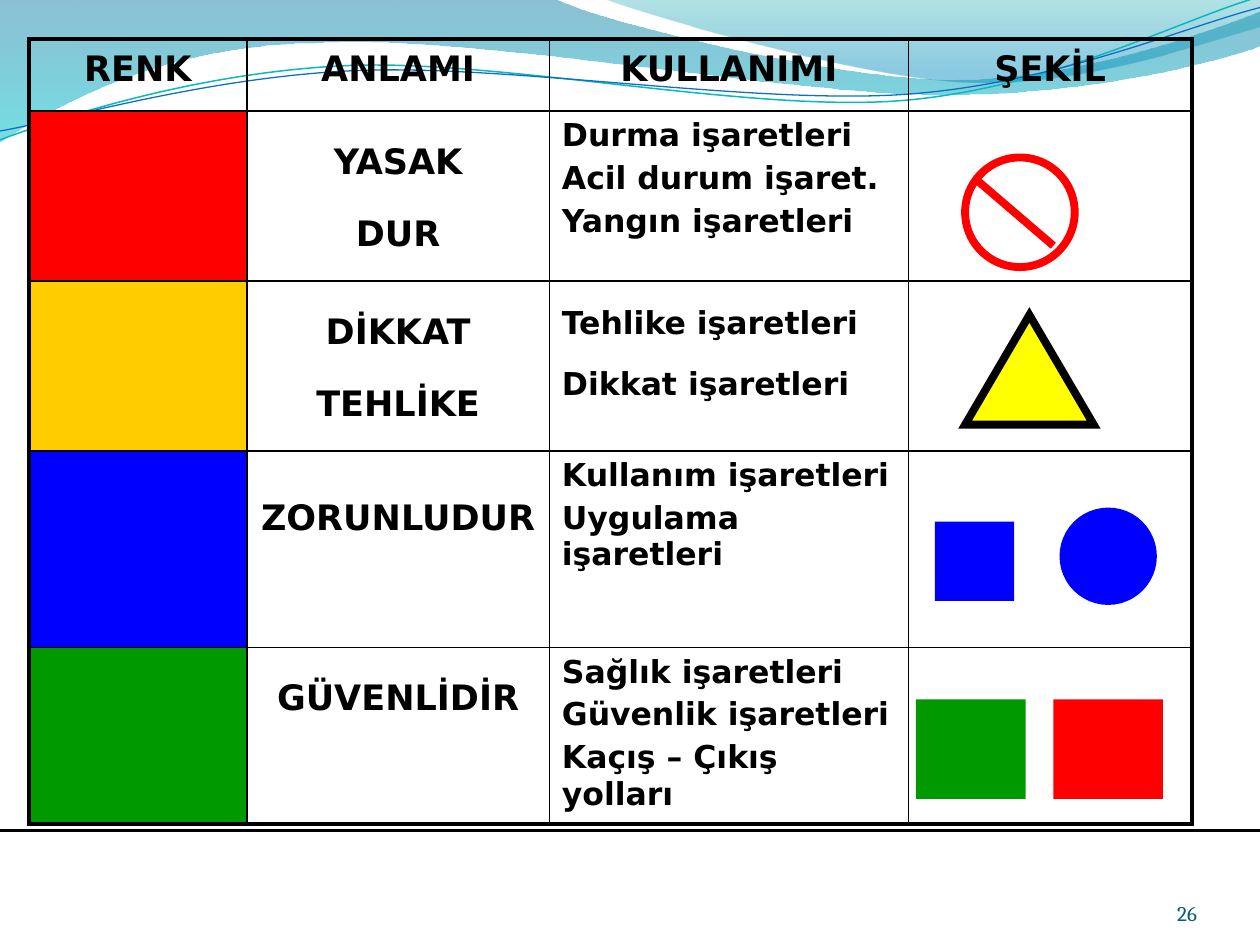
from dataclasses import dataclass
from math import cos, radians, sin
from lxml.etree import SubElement
from pptx import Presentation
from pptx.dml.color import RGBColor
from pptx.enum.shapes import MSO_CONNECTOR, MSO_SHAPE as Kind
from pptx.enum.text import MSO_ANCHOR as Anchor, PP_ALIGN as Align
from pptx.oxml.ns import qn
from pptx.util import Inches, Pt


@dataclass(frozen=True)
class Theme:
    font: str = "DejaVu Sans"
    serif: str = "Cambria"
    head: int = 20
    body: int = 18
    note: int = 12
    thin: float = 1
    edge: float = 2.25
    bold: float = 4.5
    black: str = "000000"
    white: str = "FFFFFF"
    red: str = "FF0000"
    amber: str = "FFCC00"
    yellow: str = "FFFF00"
    blue: str = "0000FF"
    green: str = "009900"
    teal: str = "045D75"


T = Theme()
COLS = (1.73, 2.4, 2.85, 2.25)
ROWS = (0.57, 1.35, 1.35, 1.56, 1.26)
HEADS = ("RENK", "ANLAMI", "KULLANIMI", "ŞEKİL")
# colour, meanings, their line spacing, uses, their line spacing
SIGNS = (
    (T.red, ("YASAK", "DUR"), 1.6,
     ("Durma işaretleri", "Acil durum işaret.", "Yangın işaretleri"), 1),
    (T.amber, ("DİKKAT", "TEHLİKE"), 1.6,
     ("Tehlike işaretleri", "Dikkat işaretleri"), 1.5),
    (T.blue, ("ZORUNLUDUR",), 2,
     ("Kullanım işaretleri", "Uygulama işaretleri"), 1),
    (T.green, ("GÜVENLİDİR",), 1.6,
     ("Sağlık işaretleri", "Güvenlik işaretleri", "Kaçış – Çıkış yolları"), 1),
)
# Waves: a start, then steps of one point (line) or three (curve);
# bands add gradient stops of (position, colour, opacity)
BANDS = (
    ((0, -0.01), (
        ((4.4, -0.01),),
        ((4.76, 0.17), (6.64, 0.63), (7.58, 0.63)),
        ((8.53, 0.63), (9.58, 0.26), (10, 0.09)),
        ((10.01, 0.36),),
        ((9.83, 0.44), (8.7, 0.76), (7.46, 0.75)),
        ((6.22, 0.75), (3.82, 0.28), (2.57, 0.34)),
        ((1.29, 0.35), (0.46, 0.83), (-0.01, 1.13))),
     ((0, "0074A1", 45), (1, "00C6CF", 55))),
    ((4.79, -0.01), (
        ((5.09, 0.11), (6.82, 0.62), (7.69, 0.65)),
        ((8.56, 0.69), (9.61, 0.32), (10, 0.21)),
        ((10, 0),)),
     ((0, "00A1A9", 30), (0.8, "008BBF", 45))),
)
STRANDS = (
    ((0, 1.11), (
        ((0.48, 0.93), (1.58, 0.57), (2.77, 0.52)),
        ((3.95, 0.47), (5.93, 0.89), (7.13, 0.8)),
        ((8.33, 0.71), (9.38, 0.15), (9.98, -0.02))), "0AB8BF", 0.85),
    ((0, 1.04), (
        ((0.47, 0.96), (1.64, 0.61), (2.83, 0.56)),
        ((4.03, 0.51), (5.97, 0.83), (7.17, 0.75)),
        ((8.36, 0.67), (9.41, 0.21), (10, 0.06))), "0F6FC6", 0.75),
)
TILT = 357.3
PIVOT = (4.99, 0.58)


def rgb(hue):
    return RGBColor.from_string(hue)


def turn(point, angle):
    """Turn a point clockwise about the pivot of the strands."""
    dx, dy = point[0] - PIVOT[0], point[1] - PIVOT[1]
    c, s = cos(radians(angle)), sin(radians(angle))
    return PIVOT[0] + dx * c - dy * s, PIVOT[1] + dx * s + dy * c


def wave(slide, box, start, steps, close, tilt=0):
    """Draw a freeform whose three-point steps are cubic curves."""
    left, top = box
    pts = [turn(p, -tilt) for p in (start, *(p for step in steps for p in step))]
    pts = [(Inches(left + x), Inches(top + y)) for x, y in pts]
    form = slide.shapes.build_freeform(*pts[0])
    form.add_line_segments(pts[1:], close=close)
    shape = form.convert_to_shape()
    shape.shadow.inherit = False
    shape.rotation = tilt
    nodes = iter(list(shape._element.iter(qn("a:lnTo"))))
    for step in steps:
        group = [next(nodes) for _ in step]
        if len(group) == 3:
            group[0].tag = qn("a:cubicBezTo")
            for node in group[1:]:
                group[0].append(node[0])
                node.getparent().remove(node)
    return shape


def paint(shape, fill, line=None, width=T.bold):
    if fill:
        shape.fill.solid()
        shape.fill.fore_color.rgb = rgb(fill)
    else:
        shape.fill.background()
    if line:
        shape.line.color.rgb = rgb(line)
        shape.line.width = Pt(width)
        SubElement(shape.line._get_or_add_ln(), qn("a:miter"), lim="800000")
    else:
        shape.line.fill.background()


def waves(slide, box):
    for start, steps, stops in BANDS:
        band = wave(slide, box, start, steps, True)
        band.line.fill.background()
        band.fill.gradient()
        band.fill.gradient_angle = 270
        for stop, (pos, hue, alpha) in zip(band.fill.gradient_stops, stops):
            stop.position = pos
            stop.color.rgb = rgb(hue)
        nodes = band._element.spPr.iter(qn("a:srgbClr"))
        for node, (pos, hue, alpha) in zip(nodes, stops):
            SubElement(node, qn("a:alpha"), val=str(alpha * 1000))
    for start, steps, hue, width in STRANDS:
        paint(wave(slide, box, start, steps, False, TILT), None, hue, width)


def rule(slide, start, end, hue, width):
    line = slide.shapes.add_connector(
        MSO_CONNECTOR.STRAIGHT, *(Inches(v) for v in (*start, *end)))
    line.line.color.rgb = rgb(hue)
    line.line.width = Pt(width)
    SubElement(line._element.spPr, qn("a:effectLst"))


def write(frame, lines, size, space=1, align=Align.LEFT, font=T.font,
          hue=T.black, bold=True, gap=0.2):
    """Write one paragraph a line; gap is a share of the type size."""
    for i, text in enumerate(lines):
        para = frame.paragraphs[0] if i == 0 else frame.add_paragraph()
        para.alignment = align
        para.line_spacing = float(space)
        para.space_before = Pt(gap * size)
        run = para.add_run()
        run.text = text
        run.font.name, run.font.size, run.font.bold = font, Pt(size), bold
        run.font.color.rgb = rgb(hue)


def border(cell, row, col):
    outer = {"L": col == 0, "R": col == len(COLS) - 1,
             "T": row == 0, "B": row == len(ROWS) - 1}
    props = cell._tc.get_or_add_tcPr()
    for side, edge in outer.items():
        line = SubElement(props, qn("a:ln" + side), w=str(Pt(T.edge if edge else T.thin)))
        SubElement(SubElement(line, qn("a:solidFill")), qn("a:srgbClr"), val=T.black)


def chart(slide, box):
    """Table of sign colours, meanings and uses."""
    left, top, high = box
    holder = slide.shapes.add_table(
        len(ROWS), len(COLS), Inches(left), Inches(top),
        Inches(sum(COLS)), Inches(high))
    grid = holder.table
    grid.first_row = grid.horz_banding = False
    for col, width in zip(grid.columns, COLS):
        col.width = Inches(width)
    for row, size in zip(grid.rows, ROWS):
        row.height = Inches(size)
    holder.height = Inches(high)
    for r in range(len(ROWS)):
        for c in range(len(COLS)):
            cell = grid.cell(r, c)
            border(cell, r, c)
            cell.fill.background()
    for c, head in enumerate(HEADS):
        write(grid.cell(0, c).text_frame, (head,), T.head, 1.1, Align.CENTER)
    for r, (hue, means, wide, uses, space) in enumerate(SIGNS, 1):
        swatch = grid.cell(r, 0).fill
        swatch.solid()
        swatch.fore_color.rgb = rgb(hue)
        write(grid.cell(r, 1).text_frame, means, T.head, wide, Align.CENTER)
        write(grid.cell(r, 2).text_frame, uses, T.body, space)


def signs(slide, box):
    """Sample signs, placed from the top left of the last column."""
    left, top = box
    for kind, x, y, w, h, fill, line in (
            (Kind.OVAL, 0.45, 0.37, 0.87, 0.87, T.white, T.red),
            (Kind.ISOSCELES_TRIANGLE, 0.45, 1.62, 1.02, 0.87, T.yellow, T.black),
            (Kind.RECTANGLE, 0.21, 3.26, 0.63, 0.63, T.blue, None),
            (Kind.OVAL, 1.23, 3.18, 0.71, 0.71, T.blue, T.blue),
            (Kind.RECTANGLE, 0.06, 4.67, 0.87, 0.79, T.green, None),
            (Kind.RECTANGLE, 1.15, 4.67, 0.87, 0.79, T.red, None)):
        shape = slide.shapes.add_shape(
            kind, Inches(left + x), Inches(top + y), Inches(w), Inches(h))
        shape.shadow.inherit = False
        paint(shape, fill, line)
    rule(slide, (left + 0.52, top + 0.53), (left + 1.15, top + 1.07), T.red, T.bold)


def number(slide, box):
    frame = slide.shapes.add_textbox(*(Inches(v) for v in box)).text_frame
    frame.word_wrap = True
    frame.margin_left = frame.margin_right = frame.margin_top = frame.margin_bottom = 0
    frame.vertical_anchor = Anchor.BOTTOM
    write(frame, ("26",), T.note, 1, Align.RIGHT, T.serif, T.teal, False, 0)


def main():
    deck = Presentation()
    deck.slide_width, deck.slide_height = Inches(10), Inches(7.5)
    slide = deck.slides.add_slide(deck.slide_layouts[6])
    left, top = 0.23, 0.31
    waves(slide, (0, 0))
    rule(slide, (0, 6.59), (10, 6.59), T.black, 2)
    number(slide, (8.67, 6.95, 0.83, 0.4))
    chart(slide, (left, top, 6.25))
    signs(slide, (left + sum(COLS[:3]), top + ROWS[0]))
    deck.save("out.pptx")


if __name__ == "__main__":
    main()
